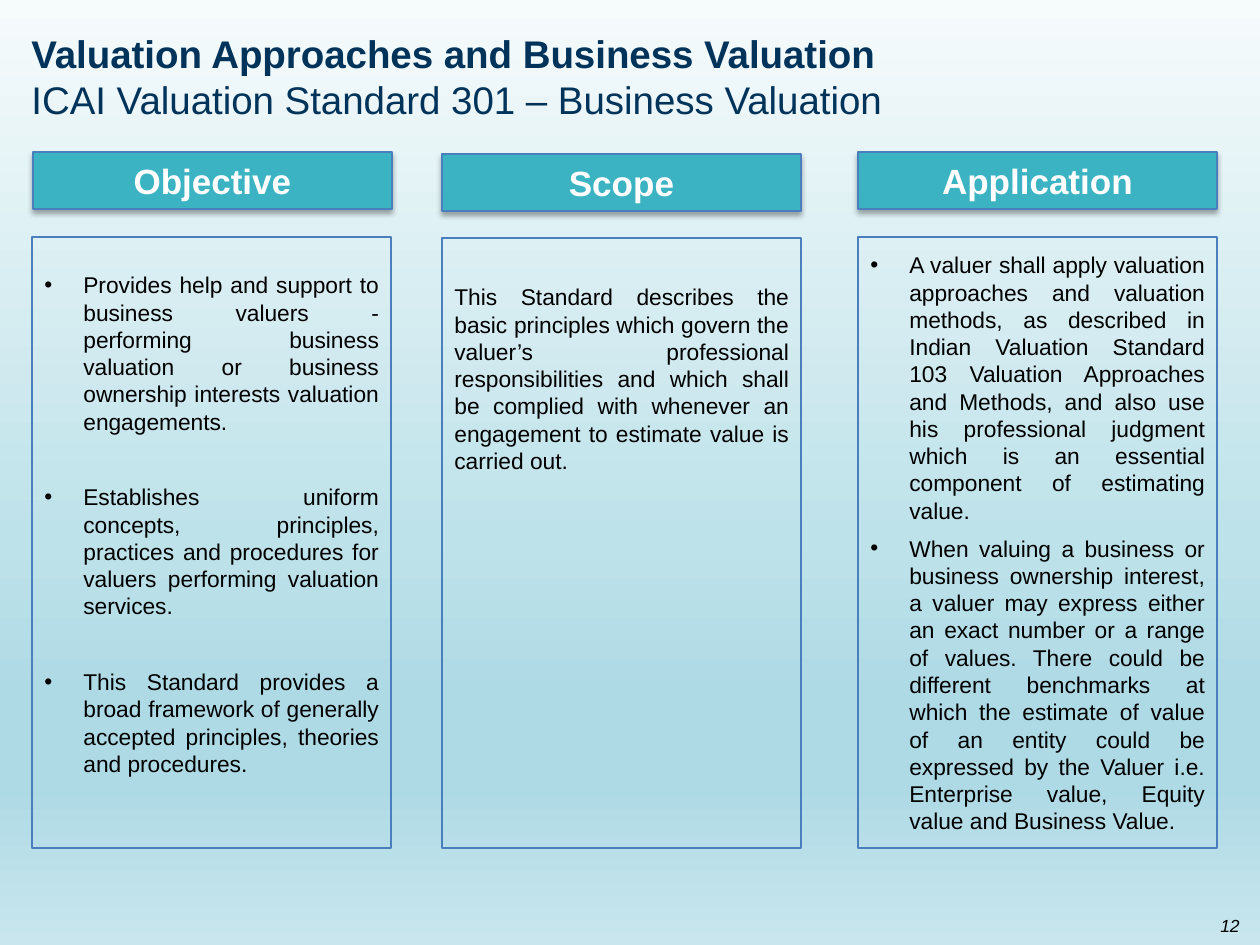
from dataclasses import dataclass

from lxml.etree import SubElement
from pptx import Presentation
from pptx.dml.color import RGBColor
from pptx.enum.shapes import MSO_SHAPE
from pptx.enum.text import MSO_ANCHOR, PP_ALIGN
from pptx.oxml.ns import qn
from pptx.util import Emu, Pt

PX = 914400 // 126
NAVY, TEAL, BORDER, BLACK, WHITE = "00335A", "3BB3C2", "4B7EBC", "000000", "FFFFFF"
BACKGROUND_STOPS = [(0, "F6FBFC"), (57, "BEE2EA"), (74, "AEDAE5"), (83, "AEDAE5"), (100, "C9E6EE")]

TITLE = {"size": Pt(22), "name": "Arial", "bold": True}
SUBTITLE = TITLE | {"bold": False}
HEADING = {"size": Pt(20), "name": "Arial", "bold": True}
BODY = {"size": Pt(13), "name": "Arial"}
PAGE_NUMBER = {"size": Pt(10), "name": "Arial", "italic": True}

COLUMN_WIDTH, HEADER_HEIGHT = 359, 57
BODY_BOTTOM, BULLET_INDENT = 848, 39


@dataclass
class Column:
    heading: str
    header_left: int
    header_top: int
    body_left: int
    body_top: int
    text_inset: int
    paragraphs: list[str]
    bulleted: bool = True
    gap: float = 6


COLUMNS = [
    Column("Objective", 33, 152, 32, 237, 34, [
        "Provides help and support to business valuers - performing business valuation "
        "or business ownership interests valuation engagements.",
        "Establishes uniform concepts, principles, practices and procedures for valuers "
        "performing valuation services.",
        "This Standard provides a broad framework of generally accepted principles, "
        "theories and procedures.",
    ], gap=27.6),
    Column("Scope", 442, 154, 442, 238, 45, [
        "This Standard describes the basic principles which govern the valuer’s "
        "professional responsibilities and which shall be complied with whenever an "
        "engagement to estimate value is carried out.",
    ], bulleted=False),
    Column("Application", 858, 152, 858, 237, 14, [
        "A valuer shall apply valuation approaches and valuation methods, as described in "
        "Indian Valuation Standard 103 Valuation Approaches and Methods, and also use his "
        "professional judgment which is an essential component of estimating value.",
        "When valuing a business or business ownership interest, a valuer may express "
        "either an exact number or a range of values. There could be different benchmarks "
        "at which the estimate of value of an entity could be expressed by the Valuer i.e. "
        "Enterprise value, Equity value and Business Value.",
    ]),
]


def px(length: int) -> Emu:
    return Emu(length * PX)


def color(value: str) -> RGBColor:
    return RGBColor.from_string(value)


def add_color(parent, value: str):
    return SubElement(parent, qn("a:srgbClr"), val=value)


def write(paragraph, text: str, format_values: dict, text_color: str, align=PP_ALIGN.LEFT):
    paragraph.alignment = align
    run = paragraph.add_run()
    run.text = text
    for name, value in format_values.items():
        setattr(run.font, name, value)
    run.font.color.rgb = color(text_color)


def add_bullet(paragraph):
    properties = paragraph._p.get_or_add_pPr()
    properties.set("marL", str(px(BULLET_INDENT)))
    properties.set("indent", str(-px(BULLET_INDENT)))
    SubElement(properties, qn("a:buFont"), typeface="Arial")
    SubElement(properties, qn("a:buChar"), char="•")


def add_shadow(shape):
    effects = shape._element.spPr.find(qn("a:effectLst"))
    shadow = SubElement(effects, qn("a:outerShdw"), blurRad=str(Pt(3.1)), dist=str(Pt(1.8)),
                        dir="5400000", rotWithShape="0")
    SubElement(add_color(shadow, BLACK), qn("a:alpha"), val="35000")


def add_text_box(slide, left: int, top: int, width: int, height: int):
    frame = slide.shapes.add_textbox(px(left), px(top), px(width), px(height)).text_frame
    frame.word_wrap = True
    frame.vertical_anchor = MSO_ANCHOR.MIDDLE
    return frame


def add_box(slide, left: int, top: int, height: int, fill: str | None = None):
    shape = slide.shapes.add_shape(MSO_SHAPE.RECTANGLE, px(left), px(top),
                                   px(COLUMN_WIDTH), px(height))
    shape.shadow.inherit = False
    if fill:
        shape.fill.solid()
        shape.fill.fore_color.rgb = color(fill)
    else:
        shape.fill.background()
    shape.line.color.rgb = color(BORDER)
    shape.line.width = Pt(0.75)
    shape.text_frame.word_wrap = True
    return shape


def add_column(slide, column: Column):
    # Heading bar
    header = add_box(slide, column.header_left, column.header_top, HEADER_HEIGHT, TEAL)
    add_shadow(header)
    header.text_frame.vertical_anchor = MSO_ANCHOR.MIDDLE
    write(header.text_frame.paragraphs[0], column.heading, HEADING, WHITE, PP_ALIGN.CENTER)

    # Outlined body
    body = add_box(slide, column.body_left, column.body_top, BODY_BOTTOM - column.body_top)
    frame = body.text_frame
    frame.vertical_anchor = MSO_ANCHOR.TOP
    frame.margin_top = px(column.text_inset)
    for index, text in enumerate(column.paragraphs):
        paragraph = frame.add_paragraph() if index else frame.paragraphs[0]
        if column.bulleted:
            add_bullet(paragraph)
        paragraph.line_spacing = Pt(15.6)
        if index:
            paragraph.space_before = Pt(column.gap)
        write(paragraph, text, BODY, BLACK, PP_ALIGN.JUSTIFY)


def paint_background(slide):
    fill = slide.background.fill
    fill.gradient()
    fill.gradient_angle = 270
    stops = next(slide.element.iter(qn("a:gsLst")))
    for stop in list(stops):
        stops.remove(stop)
    for percent, value in BACKGROUND_STOPS:
        add_color(SubElement(stops, qn("a:gs"), pos=str(percent * 1000)), value)


def main():
    presentation = Presentation()
    presentation.slide_width, presentation.slide_height = px(1260), px(945)
    slide = presentation.slides.add_slide(presentation.slide_layouts[6])
    paint_background(slide)

    # Title
    title = add_text_box(slide, 19, 7, 1221, 139)
    write(title.paragraphs[0], "Valuation Approaches and Business Valuation", TITLE, NAVY)
    write(title.add_paragraph(), "ICAI Valuation Standard 301 – Business Valuation", SUBTITLE, NAVY)
    for paragraph in title.paragraphs:
        paragraph.line_spacing = Pt(26.4)

    # Columns
    for column in COLUMNS:
        add_column(slide, column)

    # Page number
    number = add_text_box(slide, 958, 901, 294, 50)
    write(number.paragraphs[0], "12", PAGE_NUMBER, BLACK, PP_ALIGN.RIGHT)

    presentation.save("out.pptx")


if __name__ == "__main__":
    main()
